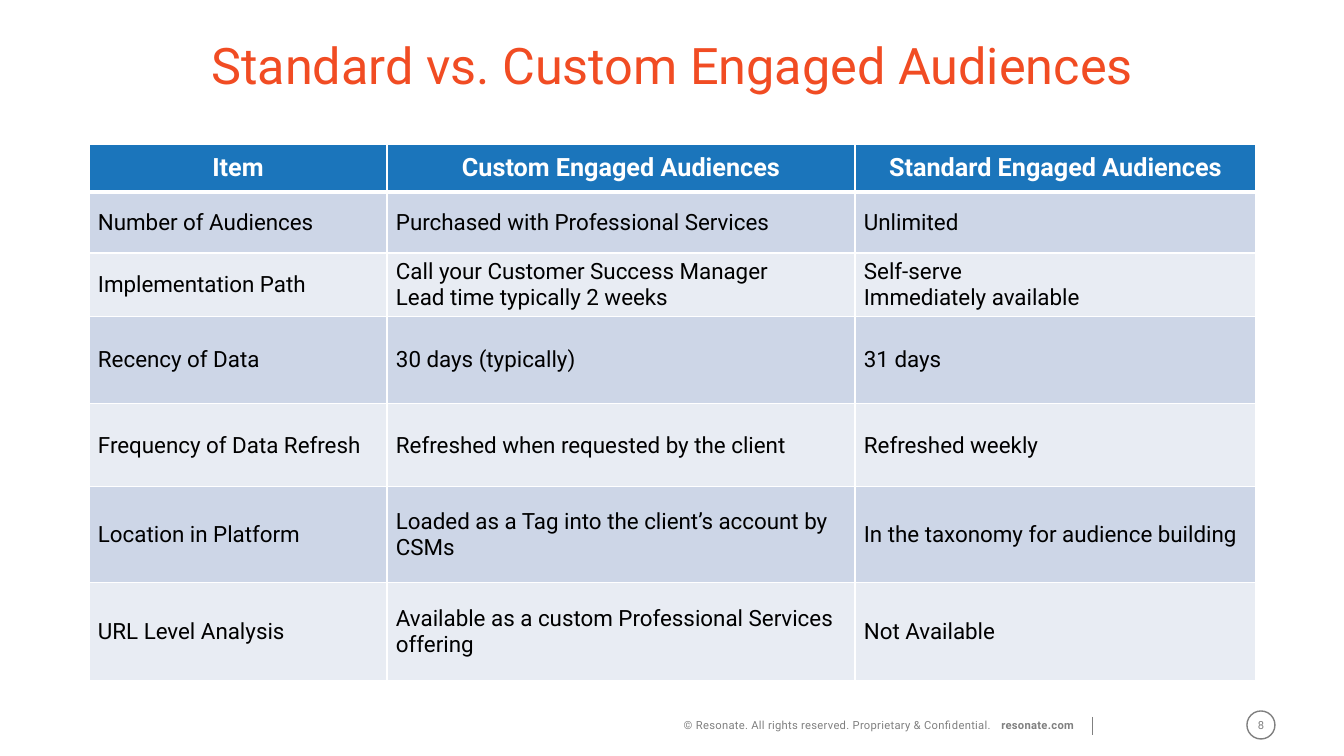
import pptx
import pptx.dml.color
import pptx.enum.shapes
import pptx.enum.text
import pptx.oxml
import pptx.oxml.ns
import pptx.util

RGBColor = pptx.dml.color.RGBColor
Pt = pptx.util.Pt
ALIGN = pptx.enum.text.PP_ALIGN
MIDDLE = pptx.enum.text.MSO_ANCHOR.MIDDLE

ORANGE = RGBColor(0xF1, 0x4C, 0x23)
BLUE = RGBColor(0x1B, 0x75, 0xBB)
BAND_DARK = RGBColor(0xCD, 0xD6, 0xE7)
BAND_LIGHT = RGBColor(0xE8, 0xEC, 0xF3)
GRAY = RGBColor(0x80, 0x80, 0x80)
WHITE = RGBColor(0xFF, 0xFF, 0xFF)
BLACK = RGBColor(0x00, 0x00, 0x00)
FONT = "Roboto"


def px(*lengths):
    """Turn pixels (100.8 to the inch) into EMU."""
    return [pptx.util.Emu(round(n * 914400 / 100.8)) for n in lengths]


def style(p, size, color, align=ALIGN.LEFT, bold=False):
    p.alignment = align
    p.font.name = FONT
    p.font.size = Pt(size)
    p.font.bold = bold
    p.font.color.rgb = color


prs = pptx.Presentation()
prs.slide_width, prs.slide_height = px(1344, 756)
s = prs.slides.add_slide(prs.slide_layouts[6])

# Page number
sp = s.shapes.add_shape(pptx.enum.shapes.MSO_SHAPE.OVAL, *px(1247, 711, 28, 28))
sp.shadow.inherit = False
sp.fill.background()
sp.line.color.rgb = GRAY
sp.line.width = Pt(1)
tf = sp.text_frame
tf.word_wrap = False
tf.vertical_anchor = MIDDLE
tf.text = "8"
style(tf.paragraphs[0], 8, GRAY, ALIGN.CENTER)

# Footer: the letter-spaced blank sets the gap before the site name
tf = s.shapes.add_textbox(*px(583, 713, 501, 25)).text_frame
tf.word_wrap = True
p = tf.paragraphs[0]
style(p, 8, GRAY, ALIGN.RIGHT)
for text, bold, spacing in (
    ("© Resonate. All rights reserved. Proprietary & Confidential.", False, 20),
    (" ", False, 480),
    ("resonate.com", True, 20),
):
    r = p.add_run()
    r.text = text
    r.font.bold = bold
    r.font._element.set("spc", str(spacing))

divider = s.shapes.add_connector(
    pptx.enum.shapes.MSO_CONNECTOR.STRAIGHT, *px(1092, 717, 1092, 735))
divider.line.color.rgb = GRAY
divider.line.width = Pt(0.5)
divider._element.spPr.append(pptx.oxml.parse_xml(
    f"<a:effectLst {pptx.oxml.ns.nsdecls('a')}/>"))

# Title
tf = s.shapes.add_textbox(*px(73, 33, 1199, 70)).text_frame
tf.word_wrap = True
tf.vertical_anchor = MIDDLE
tf.margin_left, tf.margin_right = px(40, 40)
tf.text = "Standard vs. Custom Engaged Audiences"
style(tf.paragraphs[0], 36, ORANGE, ALIGN.CENTER)
tf.paragraphs[0].line_spacing = 0.9

# Comparison table
ROWS = [
    (48, "Item", "Custom Engaged Audiences", "Standard Engaged Audiences"),
    (61, "Number of Audiences", "Purchased with Professional Services", "Unlimited"),
    (62, "Implementation Path",
     "Call your Customer Success Manager\vLead time typically 2 weeks",
     "Self-serve\vImmediately available"),
    (87, "Recency of Data", "30 days (typically)", "31 days"),
    (83, "Frequency of Data Refresh", "Refreshed when requested by the client",
     "Refreshed weekly"),
    (96, "Location in Platform", "Loaded as a Tag into the client’s account by CSMs",
     "In the taxonomy for audience building"),
    (98, "URL Level Analysis", "Available as a custom Professional Services offering",
     "Not Available"),
]
COLUMNS = px(298, 468, 401)
table = s.shapes.add_table(len(ROWS), len(COLUMNS), *px(89, 144, 1167, 535)).table
for column, width in zip(table.columns, COLUMNS):
    column.width = width

for i, (height, *texts) in enumerate(ROWS):
    table.rows[i].height = px(height)[0]
    for j, text in enumerate(texts):
        cell = table.cell(i, j)
        cell.text = text
        cell.vertical_anchor = MIDDLE
        cell.margin_left, cell.margin_right = px(9, 9)
        p = cell.text_frame.paragraphs[0]
        if i == 0:
            style(p, 18, WHITE, ALIGN.CENTER, True)
        else:
            style(p, 16, BLACK)
        for side in "LRTB":
            under_header = (i, side) in ((0, "B"), (1, "T"))
            cell._tc.get_or_add_tcPr().append(pptx.oxml.parse_xml(
                f"<a:ln{side} {pptx.oxml.ns.nsdecls('a')} "
                f'w="{Pt(3 if under_header else 1)}"><a:solidFill>'
                f'<a:srgbClr val="{WHITE}"/></a:solidFill></a:ln{side}>'))
        cell.fill.solid()
        cell.fill.fore_color.rgb = (
            BLUE if i == 0 else BAND_DARK if i % 2 else BAND_LIGHT)

prs.save("out.pptx")
